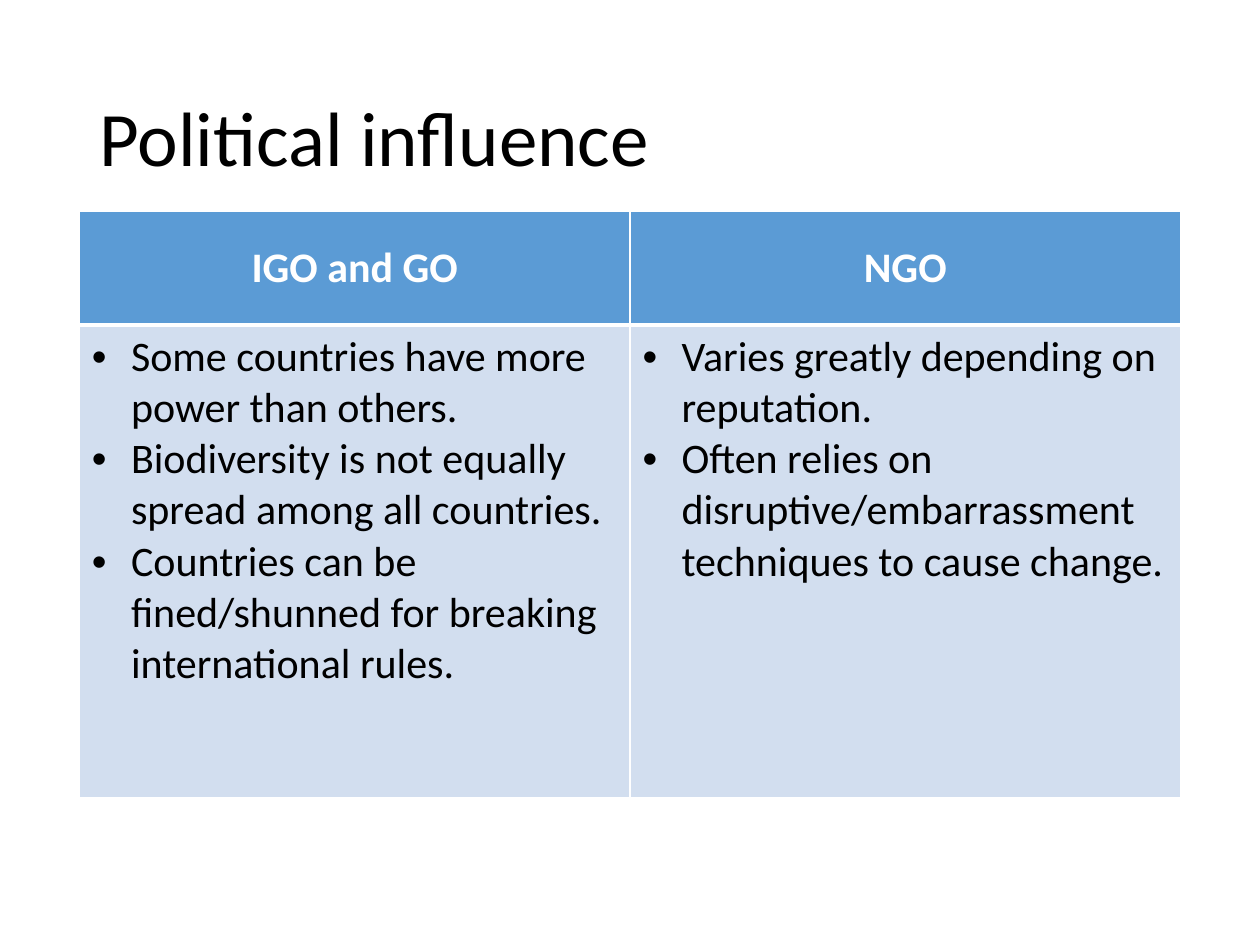
import dataclasses

import lxml.etree
import pptx
import pptx.dml.color
import pptx.enum.text
import pptx.oxml.ns
import pptx.util

Inches = pptx.util.Inches
Pt = pptx.util.Pt
qn = pptx.oxml.ns.qn
PP_ALIGN = pptx.enum.text.PP_ALIGN
MSO_ANCHOR = pptx.enum.text.MSO_ANCHOR

FONT = "Calibri"
COLORS = {
    "header": "5B9BD5",
    "body": "D2DEEF",
    "white": "FFFFFF",
    "black": "000000",
}


@dataclasses.dataclass
class Column:
    heading: str
    points: list[str]


COLUMNS = [
    Column("IGO and GO", [
        "Some countries have more power than others.",
        "Biodiversity is not equally spread among all countries.",
        "Countries can be fined/shunned for breaking international rules.",
    ]),
    Column("NGO", [
        "Varies greatly depending on reputation.",
        "Often relies on disruptive/embarrassment techniques to cause change.",
    ]),
]


def rgb(name: str) -> pptx.dml.color.RGBColor:
    return pptx.dml.color.RGBColor.from_string(COLORS[name])


def format_text(tf, size: float, color: str, bold: bool = False) -> None:
    for p in tf.paragraphs:
        for r in p.runs:
            r.font.name = FONT
            r.font.size = Pt(size)
            r.font.bold = bold
            r.font.color.rgb = rgb(color)


def set_borders(cell, widths: dict[str, float]) -> None:
    """Draw white cell borders; the lines must precede the fill."""
    tc_pr = cell._tc.get_or_add_tcPr()
    for i, (side, width) in enumerate(widths.items()):
        ln = lxml.etree.Element(qn(f"a:ln{side}"), w=str(Pt(width)))
        fill = lxml.etree.SubElement(ln, qn("a:solidFill"))
        lxml.etree.SubElement(fill, qn("a:srgbClr"), val=COLORS["white"])
        tc_pr.insert(i, ln)


def add_bullet(p) -> None:
    indent = Inches(0.31)
    p_pr = p._p.get_or_add_pPr()
    p_pr.set("marL", str(indent))
    p_pr.set("indent", str(-indent))
    lxml.etree.SubElement(p_pr, qn("a:buFont"), typeface="Arial")
    lxml.etree.SubElement(p_pr, qn("a:buChar"), char="•")


def fill_cell(cell, text: str, fill: str) -> None:
    cell.fill.solid()
    cell.fill.fore_color.rgb = rgb(fill)
    cell.text_frame.text = text


def add_title(s, text: str) -> None:
    sp = s.shapes.add_textbox(Inches(0.69), Inches(0.4), Inches(8.62), Inches(1.45))
    tf = sp.text_frame
    tf.word_wrap = True
    tf.vertical_anchor = MSO_ANCHOR.MIDDLE
    tf.text = text
    tf.paragraphs[0].line_spacing = 0.9
    format_text(tf, 44, "black")


def add_comparison(s, columns: list[Column]) -> None:
    heights = [0.9, 3.75]
    frame = s.shapes.add_table(len(heights), len(columns), Inches(0.63), Inches(1.68),
                               Inches(8.74), Inches(sum(heights)))
    table = frame.table
    for row, height in zip(table.rows, heights):
        row.height = Inches(height)

    for i, column in enumerate(columns):
        # Heading
        head = table.cell(0, i)
        fill_cell(head, column.heading, "header")
        head.vertical_anchor = MSO_ANCHOR.MIDDLE
        head.text_frame.paragraphs[0].alignment = PP_ALIGN.CENTER
        format_text(head.text_frame, 24, "white", bold=True)
        set_borders(head, {"L": 1, "R": 1, "T": 1, "B": 3})

        # Bulleted points
        body = table.cell(1, i)
        fill_cell(body, "\n".join(column.points), "body")
        for p in body.text_frame.paragraphs:
            add_bullet(p)
        format_text(body.text_frame, 24, "black")
        set_borders(body, {"L": 1, "R": 1, "T": 3, "B": 1})


def main() -> None:
    prs = pptx.Presentation()
    prs.slide_width = Inches(10)
    prs.slide_height = Inches(7.5)
    s = prs.slides.add_slide(prs.slide_layouts[6])
    add_title(s, "Political influence")
    add_comparison(s, COLUMNS)
    prs.save("out.pptx")


if __name__ == "__main__":
    main()
